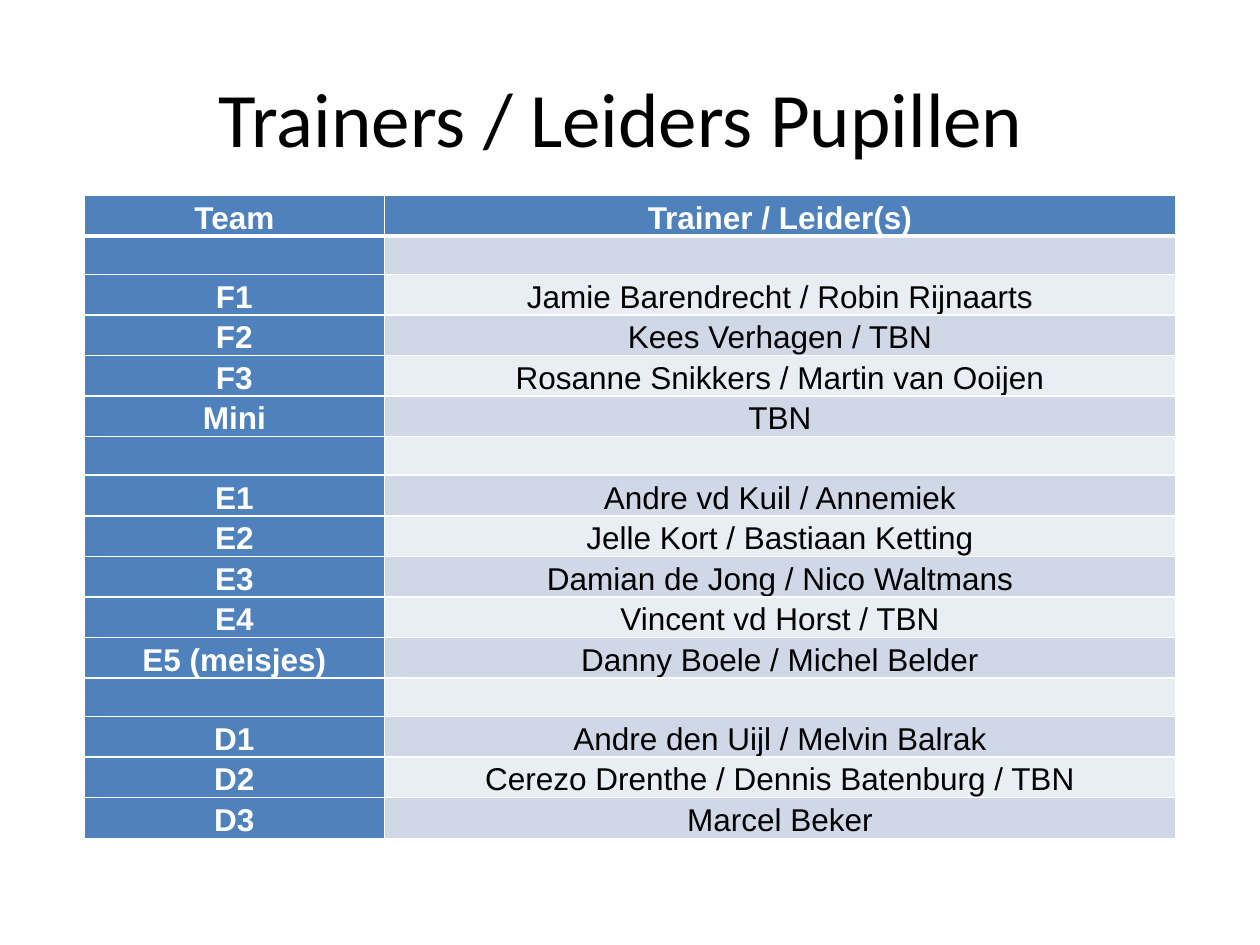
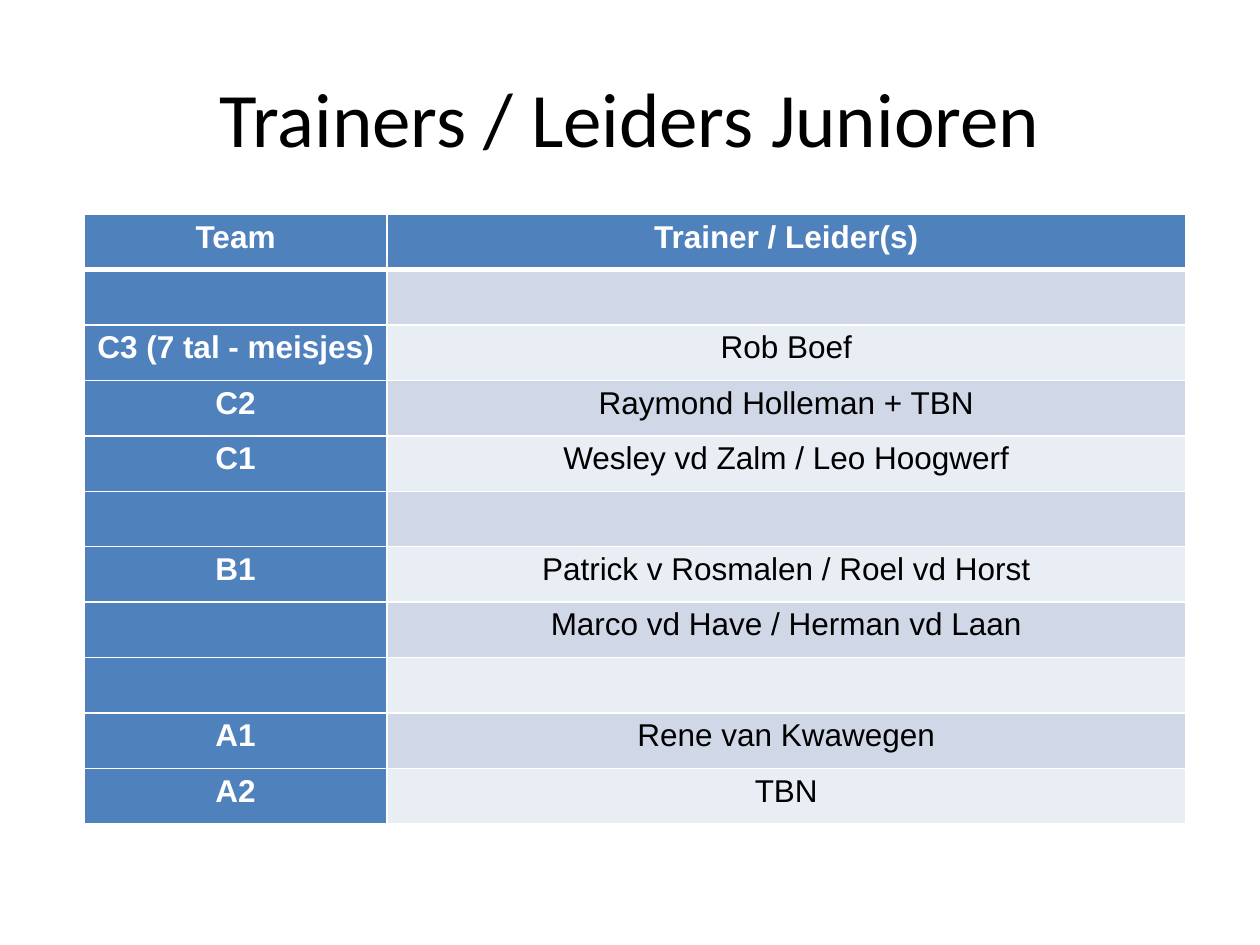
from lxml import etree
from pptx import Presentation
from pptx.dml.color import RGBColor
from pptx.enum.text import MSO_ANCHOR, PP_ALIGN
from pptx.oxml.ns import qn
from pptx.util import Inches, Pt

CENTER = PP_ALIGN.CENTER
MIDDLE = MSO_ANCHOR.MIDDLE
COLORS = {
    "blue": "4F81BD",
    "dark": "D0D8E8",
    "light": "E9EDF4",
    "white": "FFFFFF",
    "black": "000000",
}
TITLE_BOX = (0.5, 0.3, 9, 1.25)
TEXT_SIZE = 18
HEAD = ("Team", "Trainer / Leider(s)")
GAP = ("", "")

PUPILS = [
    HEAD,
    GAP,
    ("F1", "Jamie Barendrecht / Robin Rijnaarts"),
    ("F2", "Kees Verhagen / TBN"),
    ("F3", "Rosanne Snikkers / Martin van Ooijen"),
    ("Mini", "TBN"),
    GAP,
    ("E1", "Andre vd Kuil / Annemiek"),
    ("E2", "Jelle Kort / Bastiaan Ketting"),
    ("E3", "Damian de Jong / Nico Waltmans"),
    ("E4", "Vincent vd Horst / TBN"),
    ("E5 (meisjes)", "Danny Boele / Michel Belder"),
    GAP,
    ("D1", "Andre den Uijl / Melvin Balrak"),
    ("D2", "Cerezo Drenthe / Dennis Batenburg / TBN"),
    ("D3", "Marcel Beker"),
]
JUNIORS = [
    HEAD,
    GAP,
    ("C3 (7 tal - meisjes)", "Rob Boef"),
    ("C2", "Raymond Holleman + TBN"),
    ("C1", "Wesley vd Zalm / Leo Hoogwerf"),
    GAP,
    ("B1", "Patrick v Rosmalen / Roel vd Horst"),
    ("", "Marco vd Have / Herman vd Laan"),
    GAP,
    ("A1", "Rene van Kwawegen"),
    ("A2", "TBN"),
]


def rgb(name):
    return RGBColor.from_string(COLORS[name])


def style_font(font, face, size, color, bold=False):
    font.name = face
    font.size = Pt(size)
    font.bold = bold
    font.color.rgb = rgb(color)


def add_title(slide, text, box):
    title = slide.shapes.title
    title.left, title.top, title.width, title.height = map(Inches, box)
    frame = title.text_frame
    frame.text = text
    frame.vertical_anchor = MIDDLE
    para = frame.paragraphs[0]
    para.alignment = CENTER
    style_font(para.runs[0].font, "Calibri", 44, "black")


def set_edges(cell, top, base):
    props = cell._tc.get_or_add_tcPr()
    for side, width in (("L", 1), ("R", 1), ("T", top), ("B", base)):
        line = etree.SubElement(props, qn(f"a:ln{side}"), w=str(Pt(width)))
        fill = etree.SubElement(line, qn("a:solidFill"))
        etree.SubElement(fill, qn("a:srgbClr"), val=COLORS["white"])


def fill_cell(cell, text, row, col):
    strong = row == 0 or col == 0
    set_edges(cell, 3 if row == 1 else 1, 3 if row == 0 else 1)
    band = "dark" if row % 2 else "light"
    cell.fill.solid()
    cell.fill.fore_color.rgb = rgb("blue" if strong else band)
    cell.margin_left = cell.margin_right = Inches(0.07)
    cell.margin_top = cell.margin_bottom = 0
    para = cell.text_frame.paragraphs[0]
    para.text = text
    para.alignment = CENTER
    para.line_spacing = 1.15
    for run in para.runs:
        style_font(run.font, "Arial", TEXT_SIZE,
                   "white" if strong else "black", strong)
    if not text:
        etree.SubElement(para._p, qn("a:endParaRPr"), sz=str(TEXT_SIZE * 100))


def add_teams(slide, teams, box, split, step):
    left, top, width, height = box
    frame = slide.shapes.add_table(len(teams), 2, *map(Inches, box))
    table = frame.table
    table.first_col = True
    table.columns[0].width = Inches(split)
    table.columns[1].width = Inches(width - split)
    for row, team in enumerate(teams):
        table.rows[row].height = Inches(step)
        for col, text in enumerate(team):
            fill_cell(table.cell(row, col), text, row, col)
    frame.height = Inches(height)


def add_page(deck, title, teams, box, split, step):
    slide = deck.slides.add_slide(deck.slide_layouts[5])
    add_title(slide, title, TITLE_BOX)
    add_teams(slide, teams, box, split, step)


def main():
    deck = Presentation()
    deck.slide_width = Inches(10)
    deck.slide_height = Inches(7.5)
    add_page(deck, "Trainers / Leiders Pupillen ", PUPILS,
             (0.67, 1.55, 8.66, 5.52), 2.38, 0.26)
    add_page(deck, "Trainers / Leiders Junioren", JUNIORS,
             (0.67, 1.7, 8.74, 4.88), 2.4, 0.44)
    deck.save("out.pptx")


if __name__ == "__main__":
    main()
